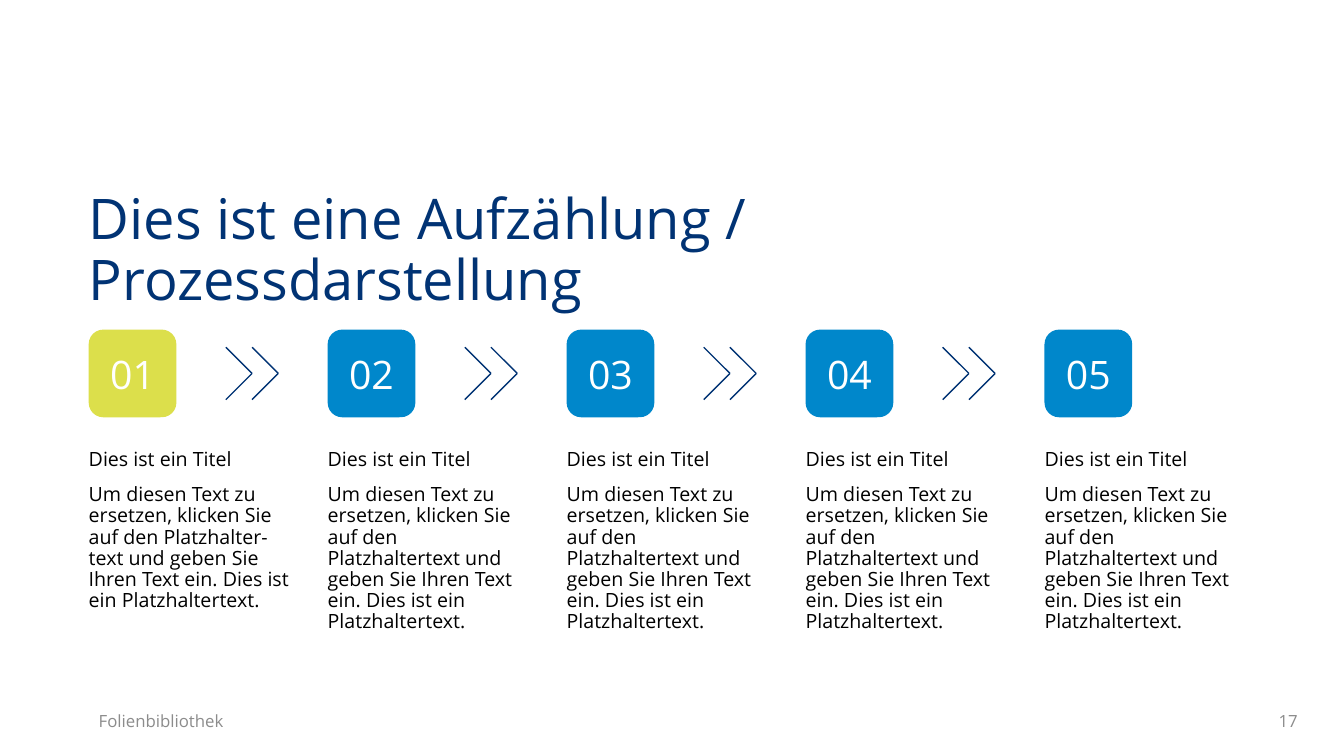
from copy import deepcopy

from lxml.etree import SubElement
from pptx import Presentation
from pptx.dml.color import RGBColor
from pptx.enum.shapes import MSO_CONNECTOR, MSO_SHAPE
from pptx.enum.text import MSO_ANCHOR, PP_ALIGN
from pptx.oxml.ns import qn
from pptx.util import Inches, Pt

TITLE = "Dies ist eine Aufzählung / Prozessdarstellung"
STEP_TITLE = "Dies ist ein Titel"
STEP_TEXT = ("Um diesen Text zu ersetzen, klicken Sie auf den {} und geben Sie "
             "Ihren Text ein. Dies ist ein Platzhaltertext.")
STEPS = [
    ("01", "Platzhalter-text"),
    ("02", "Platzhaltertext"),
    ("03", "Platzhaltertext"),
    ("04", "Platzhaltertext"),
    ("05", "Platzhaltertext"),
]
FOOTERS = [
    ("Folienbibliothek", 0.88, 8.04, PP_ALIGN.LEFT),
    ("17", 9.97, 3, PP_ALIGN.RIGHT),
]

FONT = "Open Sans"
NAVY = RGBColor(0x01, 0x33, 0x74)
BLUE = RGBColor(0x00, 0x87, 0xCB)
LIME = RGBColor(0xDC, 0xDF, 0x4B)
GRAY = RGBColor(0x8C, 0x8C, 0x8C)
BLACK = RGBColor(0, 0, 0)
WHITE = RGBColor(255, 255, 255)

LEFT, PITCH = 0.88, 2.37
BADGE_TOP, BADGE = 3.27, 0.87
CHEVRON_OFFSET, CHEVRON = 1.36, 0.26


def place(shape, left, top, width, height):
    shape.left, shape.top = Inches(left), Inches(top)
    shape.width, shape.height = Inches(width), Inches(height)


def set_margins(frame, top=0):
    frame.margin_left = frame.margin_right = frame.margin_bottom = 0
    frame.margin_top = Inches(top)


def format_paragraph(paragraph, size, color, align=PP_ALIGN.LEFT, spacing=None):
    paragraph.alignment = align
    paragraph.line_spacing = spacing
    for run in paragraph.runs:
        run.font.name = FONT
        run.font.size = Pt(size)
        run.font.color.rgb = color


def fill_step(body, left, word):
    place(body, left, 3, 2.06, 3.72)
    frame = body.text_frame
    set_margins(frame, 1.46)
    frame.text = STEP_TITLE + "\n" + STEP_TEXT.format(word)
    for index, paragraph in enumerate(frame.paragraphs):
        properties = paragraph._p.get_or_add_pPr()
        properties.set("marL", "0")
        properties.set("indent", "0")
        SubElement(properties, qn("a:buNone"))
        paragraph.space_before = Pt(10 if index else 0)
        format_paragraph(paragraph, 14, BLACK, spacing=0.9)


def add_badge(slide, left, number, color):
    badge = slide.shapes.add_shape(
        MSO_SHAPE.ROUNDED_RECTANGLE, Inches(left), Inches(BADGE_TOP),
        Inches(BADGE), Inches(BADGE))
    badge.shadow.inherit = False
    badge.fill.solid()
    badge.fill.fore_color.rgb = color
    badge.line.fill.background()
    badge.text_frame.text = number
    badge.text_frame.vertical_anchor = MSO_ANCHOR.MIDDLE
    format_paragraph(badge.text_frame.paragraphs[0], 28, WHITE, PP_ALIGN.CENTER)


def add_double_chevron(slide, left):
    group = slide.shapes.add_group_shape()
    middle = BADGE_TOP + BADGE / 2
    for start in (left, left + CHEVRON):
        for offset in (CHEVRON, -CHEVRON):
            line = group.shapes.add_connector(
                MSO_CONNECTOR.STRAIGHT, Inches(start), Inches(middle + offset),
                Inches(start + CHEVRON), Inches(middle))
            line.line.color.rgb = NAVY
            line.line.width = Pt(1)
            SubElement(line._element.spPr, qn("a:effectLst"))


def add_footer(slide, text, left, width, align):
    box = slide.shapes.add_textbox(
        Inches(left), Inches(6.95), Inches(width), Inches(0.4))
    box.text_frame.word_wrap = True
    box.text_frame.vertical_anchor = MSO_ANCHOR.MIDDLE
    box.text_frame.text = text
    format_paragraph(box.text_frame.paragraphs[0], 12, GRAY, align)


def main():
    presentation = Presentation()
    presentation.slide_width = Inches(13.33)
    presentation.slide_height = Inches(7.5)
    slide = presentation.slides.add_slide(presentation.slide_layouts[1])

    title = slide.shapes.title
    place(title, LEFT, 1.9, 11.5, 0.9)
    set_margins(title.text_frame)
    title.text_frame.vertical_anchor = MSO_ANCHOR.TOP
    title.text_frame.text = TITLE
    format_paragraph(title.text_frame.paragraphs[0], 40, NAVY, spacing=0.9)

    first_body = slide.placeholders[1]
    for index in range(1, len(STEPS)):
        element = deepcopy(first_body._element)
        element.nvSpPr.cNvPr.set("id", str(10 + index))
        element.nvSpPr.cNvPr.set("name", f"Step Text {index + 1}")
        slide.shapes._spTree.append(element)
    bodies = [shape for shape in slide.placeholders if shape.shape_id != title.shape_id]

    for index, (body, (number, word)) in enumerate(zip(bodies, STEPS)):
        left = LEFT + index * PITCH
        fill_step(body, left, word)
        add_badge(slide, left, number, BLUE if index else LIME)
        if index < len(STEPS) - 1:
            add_double_chevron(slide, left + CHEVRON_OFFSET)

    for footer in FOOTERS:
        add_footer(slide, *footer)
    presentation.save("out.pptx")


if __name__ == "__main__":
    main()
